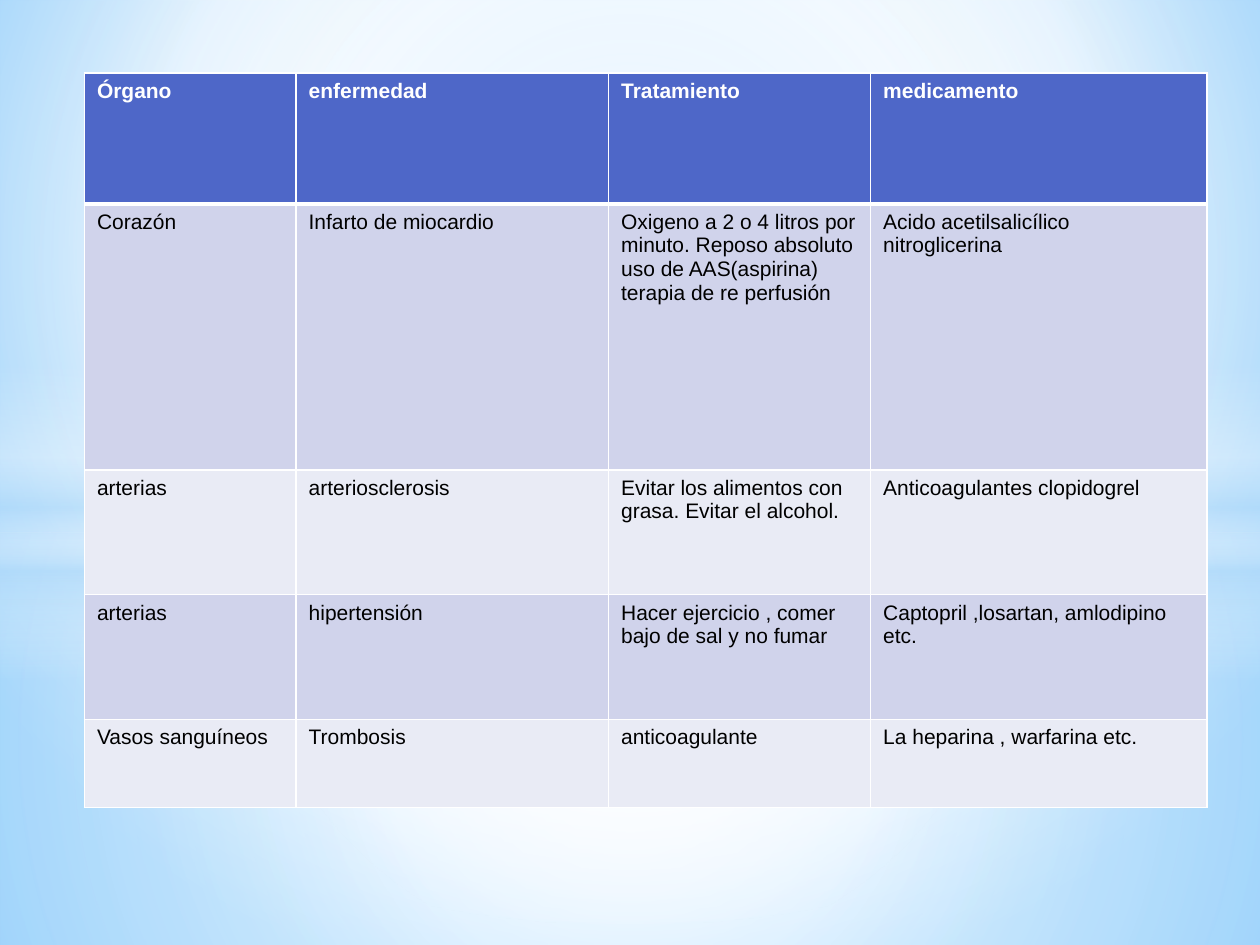
from lxml import etree
from pptx import Presentation
from pptx.dml.color import RGBColor
from pptx.enum.shapes import MSO_SHAPE
from pptx.oxml.ns import qn
from pptx.util import Inches, Pt

ROWS = [
    ("Órgano", "enfermedad", "Tratamiento", "medicamento"),
    ("Corazón", "Infarto de miocardio",
     "Oxigeno a 2 o 4 litros por minuto. Reposo absoluto uso de AAS(aspirina) "
     "terapia de re perfusión",
     "Acido acetilsalicílico nitroglicerina"),
    ("arterias", "arteriosclerosis",
     "Evitar los alimentos con grasa. Evitar el alcohol.",
     "Anticoagulantes clopidogrel"),
    ("arterias", "hipertensión",
     "Hacer ejercicio , comer bajo de sal y no fumar",
     "Captopril ,losartan, amlodipino etc."),
    ("Vasos sanguíneos", "Trombosis", "anticoagulante",
     "La heparina , warfarina etc."),
]
COLUMN_WIDTHS = [1.68, 2.48, 2.08, 2.67]
ROW_HEIGHTS = [1.04, 2.11, 0.99, 0.99, 0.7]
TABLE_LEFT, TABLE_TOP = 0.67, 0.58
HEADER_FILL, BAND_FILLS = "4E67C8", ("E9EBF5", "D0D3EB")
WHITE, BLACK, SKY = "FFFFFF", "000000", "B4DCFA"

# Gradient stops: position %, colour, opacity %
BACKGROUND_STOPS = [(0, "9ED5FF", 100), (60, WHITE, 100), (100, "5BB9FF", 100)]
BACKGROUND_FOCUS = (20, 10, 20, 60)
CENTRE = (50, 50, 50, 50)
# Preset, top, height, stops, focus (None for a vertical linear gradient)
GLOWS = [
    (MSO_SHAPE.RECTANGLE, 4.23, 3.27,
     [(0, WHITE, 91), (37, WHITE, 76), (100, SKY, 79)], CENTRE),
    (MSO_SHAPE.RECTANGLE, 0, 4.23,
     [(0, WHITE, 89), (48, WHITE, 62), (100, SKY, 79)], CENTRE),
    (MSO_SHAPE.RECTANGLE, 2.9, 2.5,
     [(0, WHITE, 0), (29, WHITE, 30), (45, SKY, 40), (55, WHITE, 26),
      (65, SKY, 60), (100, WHITE, 0)], None),
    (MSO_SHAPE.OVAL, 1.75, 5.58, [(0, WHITE, 100), (54, WHITE, 0)], CENTRE),
]


def rgb(value):
    return RGBColor.from_string(value)


def add_element(parent, tag, **attributes):
    child = etree.SubElement(parent, qn(tag))
    for name, value in attributes.items():
        child.set(name, str(value))
    return child


def set_gradient(fill, properties, stops, focus):
    """Fill the owner of the properties element with a gradient."""
    fill.solid()
    solid = properties.find(qn("a:solidFill"))
    gradient = etree.Element(qn("a:gradFill"), rotWithShape="1")
    properties.replace(solid, gradient)
    stop_list = add_element(gradient, "a:gsLst")
    for position, color, opacity in stops:
        stop = add_element(stop_list, "a:gs", pos=position * 1000)
        color_element = add_element(stop, "a:srgbClr", val=color)
        if opacity < 100:
            add_element(color_element, "a:alpha", val=opacity * 1000)
    if focus:
        circle = add_element(gradient, "a:path", path="circle")
        sides = {side: value * 1000 for side, value in zip("ltrb", focus)}
        add_element(circle, "a:fillToRect", **sides)
    else:
        add_element(gradient, "a:lin", ang=90 * 60000, scaled=0)


def set_borders(cell, widths):
    """Draw white borders; widths are in points for left, right, top, bottom."""
    properties = cell._tc.get_or_add_tcPr()
    for index, (side, width) in enumerate(zip("LRTB", widths)):
        line = add_element(properties, "a:ln" + side, w=Pt(width))
        add_element(add_element(line, "a:solidFill"), "a:srgbClr", val=WHITE)
        properties.insert(index, line)


def add_backdrop(slide, width):
    fill = slide.background.fill
    fill.solid()
    properties = slide.element.xpath("./p:cSld/p:bg/p:bgPr")[0]
    set_gradient(fill, properties, BACKGROUND_STOPS, BACKGROUND_FOCUS)
    for preset, top, height, stops, focus in GLOWS:
        shape = slide.shapes.add_shape(preset, 0, Inches(top), width, Inches(height))
        shape.shadow.inherit = False
        shape.line.fill.background()
        set_gradient(shape.fill, shape.element.spPr, stops, focus)


def add_treatment_table(slide):
    table = slide.shapes.add_table(
        len(ROWS), len(COLUMN_WIDTHS), Inches(TABLE_LEFT), Inches(TABLE_TOP),
        Inches(sum(COLUMN_WIDTHS)), Inches(sum(ROW_HEIGHTS))).table
    for column, width in zip(table.columns, COLUMN_WIDTHS):
        column.width = Inches(width)
    for index, (row, height, texts) in enumerate(zip(table.rows, ROW_HEIGHTS, ROWS)):
        row.height = Inches(height)
        is_header = index == 0
        for cell, text in zip(row.cells, texts):
            cell.fill.solid()
            cell.fill.fore_color.rgb = rgb(HEADER_FILL if is_header else BAND_FILLS[index % 2])
            set_borders(cell, (1, 1, 3 if index == 1 else 1, 3 if is_header else 1))
            cell.text_frame.text = text
            font = cell.text_frame.paragraphs[0].runs[0].font
            font.name, font.size, font.bold = "Arial", Pt(12), is_header
            font.color.rgb = rgb(WHITE if is_header else BLACK)


def main():
    presentation = Presentation()
    presentation.slide_width, presentation.slide_height = Inches(10), Inches(7.5)
    slide = presentation.slides.add_slide(presentation.slide_layouts[6])
    add_backdrop(slide, presentation.slide_width)
    add_treatment_table(slide)
    presentation.save("out.pptx")


if __name__ == "__main__":
    main()
